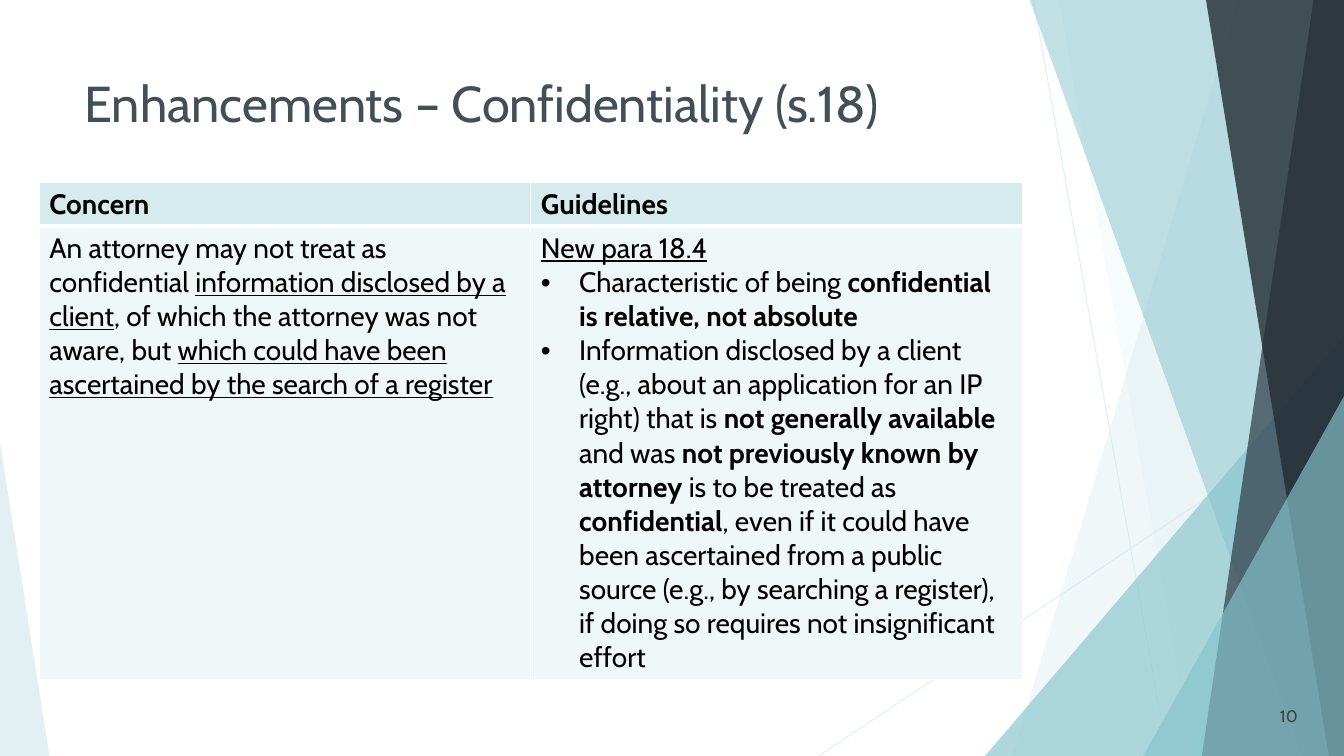
from dataclasses import dataclass

from pptx import Presentation
from pptx.dml.color import RGBColor
from pptx.enum.shapes import MSO_CONNECTOR, MSO_SHAPE
from pptx.enum.text import MSO_ANCHOR, PP_ALIGN
from pptx.oxml.ns import qn
from pptx.oxml.xmlchemy import OxmlElement
from pptx.util import Inches, Pt


@dataclass(frozen=True)
class Theme:
    font: str = "Cabin"
    white: str = "FFFFFF"
    black: str = "000000"
    pale: str = "D6EBEE"
    mist: str = "F0F7F8"
    teal: str = "86C4CD"
    slate: str = "2E3B46"
    night: str = "232C34"
    head: str = "415057"
    gray: str = "404040"
    title: int = 36
    body: int = 20
    small: int = 12


def add(parent, tag, **attrs):
    node = OxmlElement(tag)
    for key, value in attrs.items():
        node.set(key, str(value))
    parent.append(node)
    return node


def fade(part, alpha):
    for color in part.iter(qn("a:srgbClr")):
        add(color, "a:alpha", val=alpha * 1000)


def write(frame, paras, *, font, size, color, bold=False, align=PP_ALIGN.LEFT):
    frame.word_wrap = True
    for i, (runs, bullet) in enumerate(paras):
        para = frame.add_paragraph() if i else frame.paragraphs[0]
        para.alignment = align
        if bullet:
            props = para._p.get_or_add_pPr()
            indent = Inches(0.38)
            props.set("marL", str(indent))
            props.set("indent", str(-indent))
            add(props, "a:buFont", typeface="Arial")
            add(props, "a:buChar", char="•")
        for words, style in runs:
            run = para.add_run()
            run.text = words
            run.font.name = font
            run.font.size = Pt(size)
            run.font.color.rgb = RGBColor.from_string(color)
            run.font.bold = bold or style == "b"
            run.font.underline = style == "u"


class Deck:
    def __init__(self, theme):
        self.theme = theme
        self.file = Presentation()
        self.file.slide_width = Inches(13.33)
        self.file.slide_height = Inches(7.5)
        self.slide = self.file.slides.add_slide(self.file.slide_layouts[6])
        self.shapes = self.slide.shapes

    def paint(self, shape, color, alpha):
        shape.shadow.inherit = False
        shape.fill.solid()
        shape.fill.fore_color.rgb = RGBColor.from_string(color)
        fade(shape._element.spPr, alpha)
        shape.line.fill.background()

    def line(self, *ends):
        line = self.shapes.add_connector(MSO_CONNECTOR.STRAIGHT, *map(Inches, ends))
        line.line.color.rgb = RGBColor.from_string(self.theme.pale)
        line.line.width = Pt(0.75)
        fade(line._element.spPr, 70)
        add(line._element.spPr, "a:effectLst")

    def band(self, top, foot, color, alpha):
        right, high, low = 13.33, -0.01, 7.5
        points = [(top, high), (right, high), (right, low), (foot, low)]
        points = [(Inches(x), Inches(y)) for x, y in points]
        pen = self.shapes.build_freeform(*points[0])
        pen.add_line_segments(points[1:], close=True)
        self.paint(pen.convert_to_shape(), color, alpha)

    def wedge(self, box, apex, color, alpha):
        shape = self.shapes.add_shape(MSO_SHAPE.ISOSCELES_TRIANGLE, *map(Inches, box))
        shape.adjustments[0] = apex
        self.paint(shape, color, alpha)

    def text(self, box, words, anchor=MSO_ANCHOR.TOP, **style):
        frame = self.shapes.add_textbox(*map(Inches, box)).text_frame
        frame.vertical_anchor = anchor
        write(frame, [([(words, "")], False)], font=self.theme.font, **style)

    def edge(self, cell, first):
        props = cell._tc.get_or_add_tcPr()
        for side in "LRTB":
            thick = 3 if (first and side == "B") or (not first and side == "T") else 1
            line = add(props, f"a:ln{side}", w=Pt(thick))
            add(add(line, "a:solidFill"), "a:srgbClr", val=self.theme.white)

    def table(self, box, rows, highs):
        theme = self.theme
        frame = self.shapes.add_table(len(rows), len(rows[0]), *map(Inches, box))
        table = frame.table
        for r, row in enumerate(rows):
            table.rows[r].height = Inches(highs[r])
            for c, paras in enumerate(row):
                cell = table.cell(r, c)
                self.edge(cell, r == 0)
                cell.fill.solid()
                cell.fill.fore_color.rgb = RGBColor.from_string(theme.mist if r else theme.pale)
                write(cell.text_frame, paras, font=theme.font, size=theme.body,
                      color=theme.black, bold=r == 0)


def main():
    theme = Theme()
    deck = Deck(theme)
    deck.line(10.25, 0, 11.58, 7.5)
    deck.line(13.33, 4.03, 8.12, 7.5)
    deck.band(12.28, 10.04, theme.pale, 36)
    deck.band(10.5, 11.83, theme.pale, 20)
    deck.wedge((9.77, 3.33, 3.56, 4.17), 1, theme.teal, 66)
    deck.band(10.21, 12.91, theme.teal, 50)
    deck.band(13.03, 11.92, theme.slate, 70)
    deck.band(11.96, 13.18, theme.night, 80)
    deck.wedge((11.34, 3.93, 1.99, 3.57), 1, theme.teal, 66)
    deck.wedge((0, 4.39, 0.49, 3.11), 0, theme.pale, 70)

    deck.text((0.74, 0.67, 9.4, 0.99), "Enhancements – Confidentiality (s.18)",
              size=theme.title, color=theme.head)
    concern = [([
        ("An attorney may not treat as confidential ", ""),
        ("information disclosed by a client", "u"),
        (", of which the attorney was not aware, but ", ""),
        ("which could have been ascertained by the search of a register", "u"),
    ], False)]
    guide = [
        ([("New para 18.4", "u")], False),
        ([("Characteristic of being ", ""),
          ("confidential is relative, not absolute", "b")], True),
        ([("Information disclosed by a client (e.g., about an application "
           "for an IP right) that is ", ""),
          ("not generally available", "b"),
          (" and was ", ""),
          ("not previously known by attorney", "b"),
          (" is to be treated as ", ""),
          ("confidential", "b"),
          (", even if it could have been ascertained from a public source "
           "(e.g., by searching a register), if doing so requires not "
           "insignificant effort", "")], True),
    ]
    heads = [[([(name, "")], False)] for name in ("Concern", "Guidelines")]
    deck.table((0.39, 1.81, 9.75, 4.91), [heads, [concern, guide]], (0.41, 4.5))
    deck.text((12.22, 6.9, 0.75, 0.4), "10", MSO_ANCHOR.MIDDLE,
              size=theme.small, color=theme.gray, align=PP_ALIGN.RIGHT)
    deck.file.save("out.pptx")


if __name__ == "__main__":
    main()
